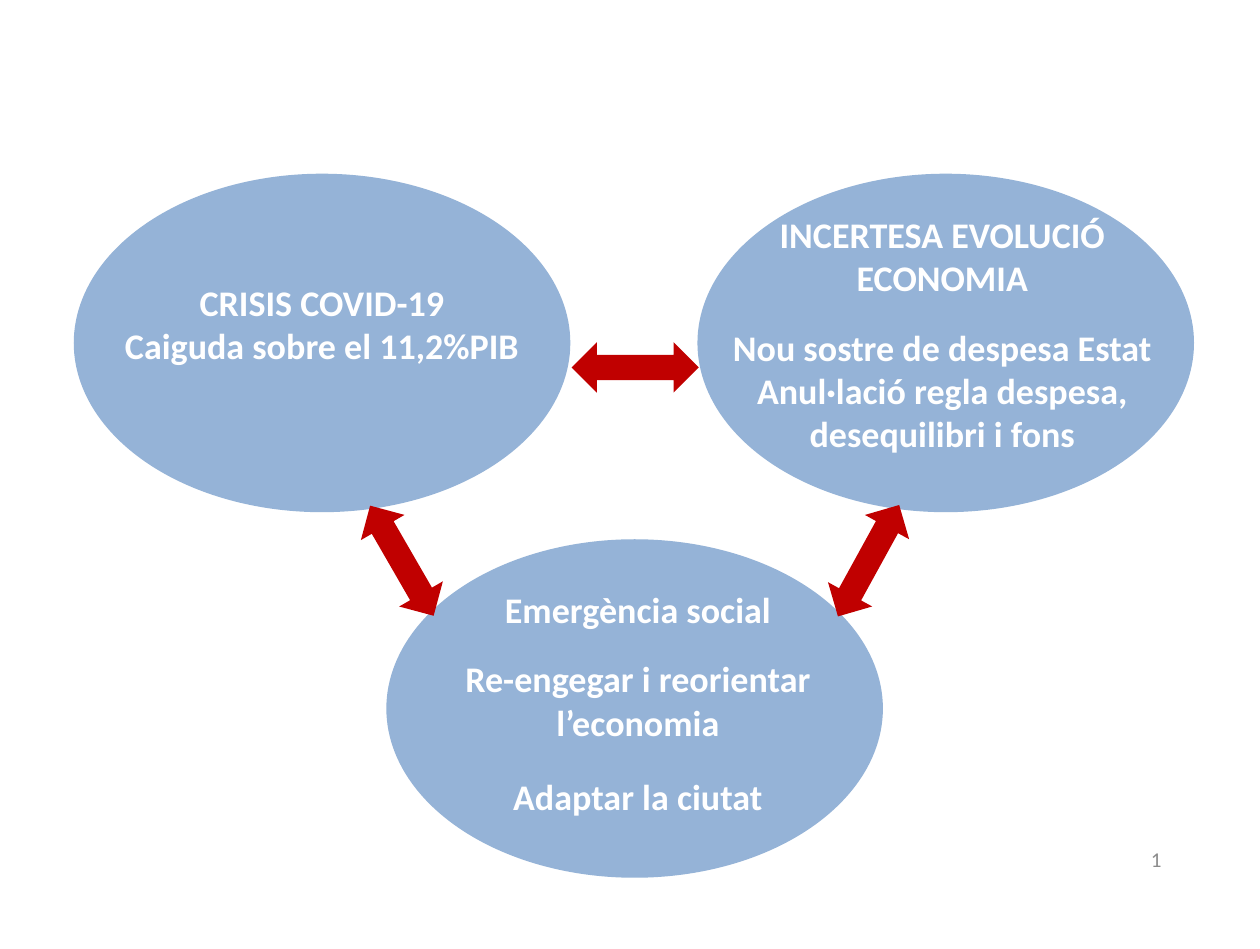
"""Build a slide of three linked themes: crisis, uncertainty and response."""
from pptx import Presentation
from pptx import util as u
from pptx.dml.color import RGBColor
from pptx.enum import shapes, text

BLUE = RGBColor(0x95, 0xB3, 0xD7)
RED = RGBColor(0xC0, 0x00, 0x00)
WHITE = RGBColor(0xFF, 0xFF, 0xFF)
GREY = RGBColor(0x8C, 0x8C, 0x8C)

PAGE_SIZE = (699.84, 527.04)
OVAL_SIZE = (275.8, 188)
ARROW_SIZE = (70.6, 28)

THEMES = [
    {"oval": (41, 96.5), "box": (53.9, 152, 250, 56),
     "lines": [("CRISIS COVID-19", 0), ("Caiguda sobre el 11,2%PIB", 0)]},
    {"oval": (387.4, 96.5), "box": (388.1, 114.5, 270.7, 172),
     "lines": [("INCERTESA EVOLUCIÓ ECONOMIA", 0),
               ("Nou sostre de despesa Estat", 14.65),
               ("Anul·lació regla despesa, desequilibri i fons", 0)]},
    {"oval": (214.6, 299.5), "box": (243.4, 322.6, 221.8, 138),
     "lines": [("Emergència social", 0),
               ("Re-engegar i reorientar l’economia", 14.65),
               ("Adaptar la ciutat", 17.1)]},
]
ARROWS = [(352.8, 204.1, 0), (482.4, 311.4, 118.8), (223.2, 311.4, 60)]
PAGE_NUMBER = ("1", (494.6, 463, 157.7, 28))


def add_filled(page, kind, place, color):
    shape = page.shapes.add_shape(kind, *map(u.Pt, place))
    shape.shadow.inherit = False
    shape.fill.solid()
    shape.fill.fore_color.rgb = color
    shape.line.fill.background()
    return shape


def add_text(page, place, lines, size, color, align, bold=False):
    box = page.shapes.add_textbox(*map(u.Pt, place))
    frame = box.text_frame
    frame.word_wrap = True
    for index, (words, gap) in enumerate(lines):
        para = frame.paragraphs[0] if index == 0 else frame.add_paragraph()
        para.text = words
        para.alignment = align
        if gap:
            para.space_before = u.Pt(gap)
        para.font.name = "Calibri"
        para.font.size = u.Pt(size)
        para.font.bold = bold
        para.font.color.rgb = color
    return frame


def main():
    deck = Presentation()
    deck.slide_width, deck.slide_height = map(u.Pt, PAGE_SIZE)
    page = deck.slides.add_slide(deck.slide_layouts[6])

    number, place = PAGE_NUMBER
    frame = add_text(page, place, [(number, 0)], 11.7, GREY, text.PP_ALIGN.RIGHT)
    frame.vertical_anchor = text.MSO_ANCHOR.MIDDLE

    for theme in THEMES:
        add_filled(page, shapes.MSO_SHAPE.OVAL, theme["oval"] + OVAL_SIZE, BLUE)
        add_text(page, theme["box"], theme["lines"], 20, WHITE,
                 text.PP_ALIGN.CENTER, bold=True)

    width, height = ARROW_SIZE
    for center_x, center_y, angle in ARROWS:
        place = (center_x - width / 2, center_y - height / 2, width, height)
        arrow = add_filled(page, shapes.MSO_SHAPE.LEFT_RIGHT_ARROW, place, RED)
        arrow.rotation = angle

    deck.save("out.pptx")


if __name__ == "__main__":
    main()
